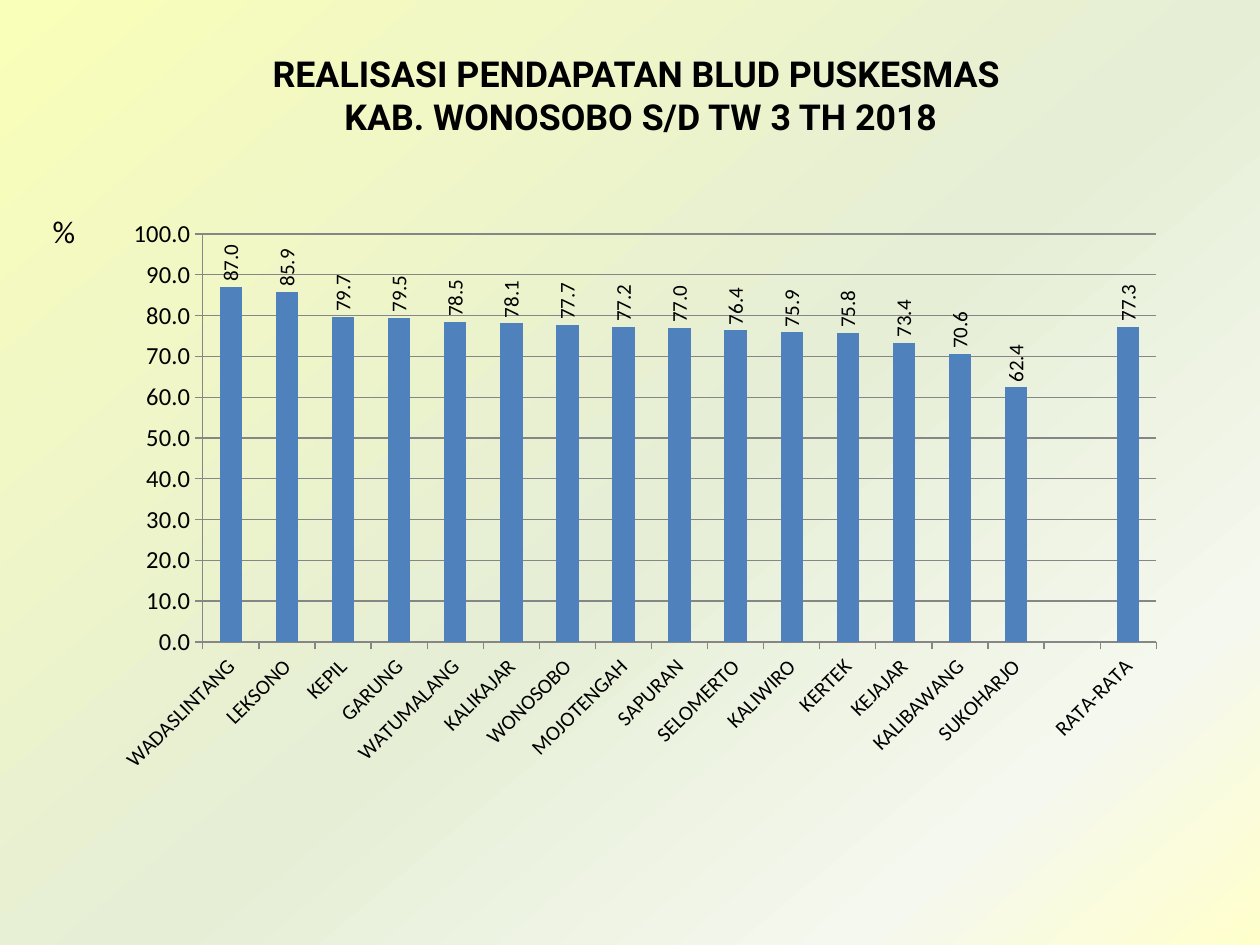
from lxml import etree
from pptx import Presentation
from pptx.chart.data import CategoryChartData
from pptx.dml.color import RGBColor
from pptx.enum.chart import XL_CHART_TYPE as ChartType, XL_LABEL_POSITION as LabelPos, XL_TICK_MARK as Tick
from pptx.enum.text import MSO_ANCHOR as Anchor, MSO_AUTO_SIZE as AutoSize, PP_ALIGN as Align
from pptx.oxml import parse_xml
from pptx.oxml.ns import nsdecls, qn
from pptx.util import Inches, Pt

COLORS = {"text": "000000", "bar": "4F81BD", "line": "868686"}
BACKGROUND_STOPS = [(0, "F9FEB8"), (53, "E6EED6"), (83, "F5F8EE"), (100, "FFFFCC")]
BACKGROUND_ANGLE = 50

TITLE_LINES = ["REALISASI PENDAPATAN BLUD PUSKESMAS", " KAB. WONOSOBO S/D TW 3 TH 2018"]
REALISATION = [
    ("WADASLINTANG", 87.0), ("LEKSONO", 85.9), ("KEPIL", 79.7), ("GARUNG", 79.5),
    ("WATUMALANG", 78.5), ("KALIKAJAR", 78.1), ("WONOSOBO", 77.7), ("MOJOTENGAH", 77.2),
    ("SAPURAN", 77.0), ("SELOMERTO", 76.4), ("KALIWIRO", 75.9), ("KERTEK", 75.8),
    ("KEJAJAR", 73.4), ("KALIBAWANG", 70.6), ("SUKOHARJO", 62.4), ("", None),
    ("RATA-RATA", 77.3),
]
PLOT_AREA = {"x": 0.1, "y": 0.05, "w": 0.88, "h": 0.71}


def color(name):
    return RGBColor.from_string(COLORS[name])


def inches(box):
    return [Inches(length) for length in box]


def set_font(font, size, name="Calibri", bold=False):
    for attribute, value in {"size": Pt(size), "name": name, "bold": bold}.items():
        setattr(font, attribute, value)
    font.color.rgb = color("text")


def fill_background(slide):
    stops = "".join(
        f'<a:gs pos="{position * 1000}"><a:srgbClr val="{value}"/></a:gs>'
        for position, value in BACKGROUND_STOPS
    )
    slide.element.cSld.insert(0, parse_xml(
        f'<p:bg {nsdecls("p", "a")}><p:bgPr><a:gradFill rotWithShape="1">'
        f'<a:gsLst>{stops}</a:gsLst><a:lin ang="{BACKGROUND_ANGLE * 60000}" scaled="0"/>'
        "</a:gradFill><a:effectLst/></p:bgPr></p:bg>"
    ))


def add_title(slide, box):
    frame = slide.shapes.add_textbox(*inches(box)).text_frame
    frame.word_wrap = True
    frame.vertical_anchor = Anchor.MIDDLE
    frame.text = "\n".join(TITLE_LINES)
    for line in frame.paragraphs:
        line.alignment = Align.CENTER
        set_font(line.runs[0].font, 20.4, "Roboto", bold=True)


def add_unit(slide, box):
    frame = slide.shapes.add_textbox(*inches(box)).text_frame
    frame.auto_size = AutoSize.SHAPE_TO_FIT_TEXT
    frame.text = "%"
    set_font(frame.paragraphs[0].runs[0].font, 18)


def rotate_text(text_parent, degrees):
    body = text_parent.find(qn("c:txPr")).find(qn("a:bodyPr"))
    body.set("rot", str(degrees * 60000))
    body.set("vert", "horz")


def fix_plot_area(chart):
    """Give the inner plot area its place as fractions of the chart."""
    plot_area = chart.element.chart.plotArea
    for automatic in plot_area.findall(qn("c:layout")):
        plot_area.remove(automatic)
    layout = etree.Element(qn("c:layout"))
    manual = etree.SubElement(layout, qn("c:manualLayout"))
    settings = {"layoutTarget": "inner", "xMode": "edge", "yMode": "edge", **PLOT_AREA}
    for tag, value in settings.items():
        etree.SubElement(manual, qn(f"c:{tag}")).set("val", str(value))
    plot_area.insert(0, layout)


def style_axis(axis, size):
    axis.major_tick_mark = Tick.OUTSIDE
    axis.minor_tick_mark = Tick.NONE
    axis.format.line.color.rgb = color("line")
    set_font(axis.tick_labels.font, size)


def add_realisation_chart(slide, box):
    data = CategoryChartData(number_format="0.0")
    names, values = zip(*REALISATION)
    data.categories = names
    data.add_series("Series 1", values)
    chart = slide.shapes.add_chart(ChartType.COLUMN_CLUSTERED, *inches(box), data).chart
    chart.has_title = chart.has_legend = False
    set_font(chart.font, 10)
    fix_plot_area(chart)

    style_axis(chart.category_axis, 12)
    rotate_text(chart.category_axis._element, -45)

    percent = chart.value_axis
    style_axis(percent, 14)
    percent.minimum_scale, percent.maximum_scale, percent.major_unit = 0, 100, 10
    percent.tick_labels.number_format = "0.0"
    percent.tick_labels.number_format_is_linked = False
    percent.major_gridlines.format.line.color.rgb = color("line")

    plot = chart.plots[0]
    plot.gap_width = 150
    plot.vary_by_categories = False
    bars = plot.series[0]
    bars.format.fill.solid()
    bars.format.fill.fore_color.rgb = color("bar")
    labels = bars.data_labels
    set_font(labels.font, 12)
    label_format = {"show_value": True, "number_format": "0.0",
                    "number_format_is_linked": False, "position": LabelPos.OUTSIDE_END}
    for attribute, value in label_format.items():
        setattr(labels, attribute, value)
    rotate_text(labels._element, -90)


def main():
    deck = Presentation()
    deck.slide_width, deck.slide_height = Inches(10), Inches(7.5)
    slide = deck.slides.add_slide(deck.slide_layouts[6])
    fill_background(slide)
    add_title(slide, (0.75, 0.44, 8.6, 0.63))
    add_unit(slide, (0.32, 1.63, 0.31, 0.4))
    add_realisation_chart(slide, (0.75, 1.63, 8.6, 4.56))
    deck.save("out.pptx")


if __name__ == "__main__":
    main()
